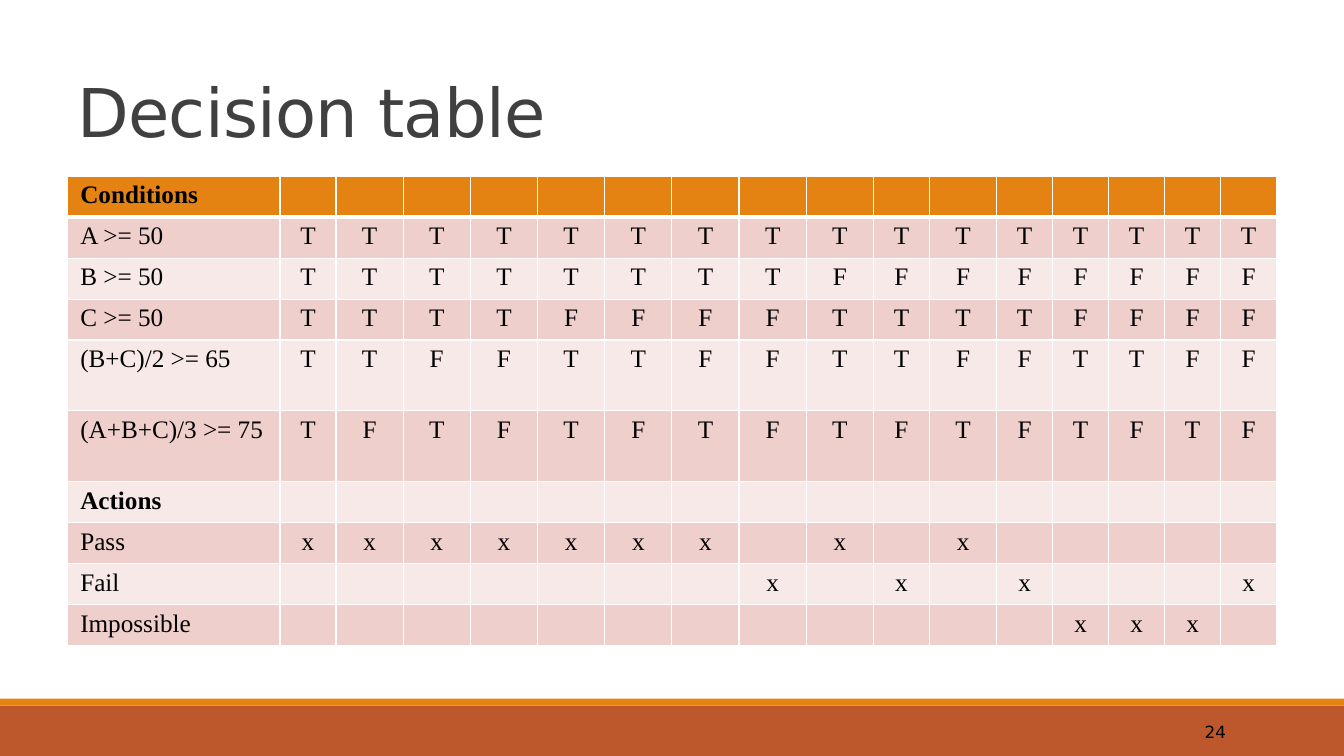
from lxml import etree
from pptx import Presentation
from pptx.dml.color import RGBColor
from pptx.enum.shapes import MSO_SHAPE
from pptx.enum.text import MSO_ANCHOR, MSO_AUTO_SIZE, PP_ALIGN
from pptx.oxml.ns import qn
from pptx.util import Inches, Pt

RECTANGLE = MSO_SHAPE.RECTANGLE
LEFT, CENTER, RIGHT = PP_ALIGN.LEFT, PP_ALIGN.CENTER, PP_ALIGN.RIGHT
MIDDLE, BOTTOM = MSO_ANCHOR.MIDDLE, MSO_ANCHOR.BOTTOM
NO_AUTOFIT = MSO_AUTO_SIZE.NONE
TITLE_ONLY_LAYOUT = 5

SLIDE_WIDTH, SLIDE_HEIGHT = Inches(13 + 1 / 3), Inches(7.5)
GRID = 120  # columns and rows across the slide

RULES = [  # label, one letter per rule, a dot for an empty cell
    ("Conditions", "................"),
    ("A >= 50", "TTTTTTTTTTTTTTTT"),
    ("B >= 50", "TTTTTTTTFFFFFFFF"),
    ("C >= 50", "TTTTFFFFTTTTFFFF"),
    ("(B+C)/2 >= 65", "TTFFTTFFTTFFTTFF"),
    ("(A+B+C)/3 >= 75", "TFTFTFTFTFTFTFTF"),
    ("Actions", "................"),
    ("Pass", "xxxxxxx.x.x....."),
    ("Fail", ".......x.x.x...x"),
    ("Impossible", "............xxx."),
]
HEADINGS = ("Conditions", "Actions")
COLUMN_WIDTHS = [19, 5] + [6] * 8 + [5, 6] + [5] * 5
ROW_HEIGHTS = [6.5] * 4 + [11.25] * 2 + [6.5] * 4


def color(hex_string):
    return RGBColor.from_string(hex_string)


def columns(count):
    return round(SLIDE_WIDTH * count / GRID)


def rows(count):
    return round(SLIDE_HEIGHT * count / GRID)


def box(left, top, width, height):
    return columns(left), rows(top), columns(width), rows(height)


class DecisionSlide:
    """Holds the style and the slide; every place and size is in grid units."""

    sans, serif = "DejaVu Sans", "Times New Roman"
    orange, rust, white = "E48312", "BD582C", "FFFFFF"
    bands = ("F7E9E7", "EFCFCC")
    title_color, text_color = "404040", "000000"

    def __init__(self, presentation):
        layout = presentation.slide_layouts[TITLE_ONLY_LAYOUT]
        self.slide = presentation.slides.add_slide(layout)

    def add_run(self, paragraph, text, size, font, fill, bold=False):
        run = paragraph.add_run()
        run.text = text
        run.font.size, run.font.name, run.font.bold = Pt(size), font, bold
        run.font.color.rgb = color(fill)
        return run

    def add_bar(self, top, height, fill):
        bar = self.slide.shapes.add_shape(RECTANGLE, *box(0, top, GRID, height))
        bar.shadow.inherit = False
        bar.fill.solid()
        bar.fill.fore_color.rgb = color(fill)
        bar.line.fill.background()

    def set_title(self, text, *place):
        title = self.slide.shapes.title
        title.left, title.top, title.width, title.height = box(*place)
        frame = title.text_frame
        frame.auto_size, frame.vertical_anchor = NO_AUTOFIT, BOTTOM
        paragraph = frame.paragraphs[0]
        paragraph.alignment, paragraph.line_spacing = LEFT, 0.85
        run = self.add_run(paragraph, text, 48, self.sans, self.title_color)
        run.font._element.set("spc", "-50")

    def add_page_number(self, text, *place):
        frame = self.slide.shapes.add_textbox(*box(*place)).text_frame
        frame.word_wrap, frame.vertical_anchor = True, MIDDLE
        paragraph = frame.paragraphs[0]
        paragraph.alignment = RIGHT
        self.add_run(paragraph, text, 12, self.sans, self.text_color)

    def set_borders(self, cell, top, bottom):
        """Draws white borders; top and bottom are widths in points."""
        properties = cell._tc.get_or_add_tcPr()
        for side, width in (("L", 1), ("R", 1), ("T", top), ("B", bottom)):
            line = etree.SubElement(properties, qn(f"a:ln{side}"), w=str(Pt(width)))
            fill = etree.SubElement(line, qn("a:solidFill"))
            etree.SubElement(fill, qn("a:srgbClr"), val=self.white)

    def fill_cell(self, cell, text, row, alignment, bold):
        self.set_borders(cell, 3 if row == 1 else 1, 3 if row == 0 else 1)
        cell.fill.solid()
        cell.fill.fore_color.rgb = color(self.bands[row % 2] if row else self.orange)
        cell.margin_left = cell.margin_right = Inches(0.13)
        cell.margin_top = cell.margin_bottom = Inches(0.05)
        if text != ".":
            paragraph = cell.text_frame.paragraphs[0]
            paragraph.alignment = alignment
            self.add_run(paragraph, text, 18, self.serif, self.text_color, bold)

    def add_decision_table(self, left, top):
        place = box(left, top, sum(COLUMN_WIDTHS), sum(ROW_HEIGHTS))
        table = self.slide.shapes.add_table(len(RULES), len(COLUMN_WIDTHS), *place).table
        table.horz_banding = False
        for column, width in zip(table.columns, COLUMN_WIDTHS):
            column.width = columns(width)
        for table_row, height in zip(table.rows, ROW_HEIGHTS):
            table_row.height = rows(height)
        for row, (label, marks) in enumerate(RULES):
            self.fill_cell(table.cell(row, 0), label, row, LEFT, label in HEADINGS)
            for column, mark in enumerate(marks, start=1):
                self.fill_cell(table.cell(row, column), mark, row, CENTER, False)


def main():
    presentation = Presentation()
    presentation.slide_width, presentation.slide_height = SLIDE_WIDTH, SLIDE_HEIGHT
    slide = DecisionSlide(presentation)
    slide.add_bar(112, 8, slide.rust)
    slide.add_bar(110.9, 1.1, slide.orange)
    slide.set_title("Decision table", 6, 4.8, 108, 20)
    slide.add_decision_table(6, 28)
    slide.add_page_number("24", 97.5, 113, 12.85, 6.4)
    presentation.save("out.pptx")


if __name__ == "__main__":
    main()
